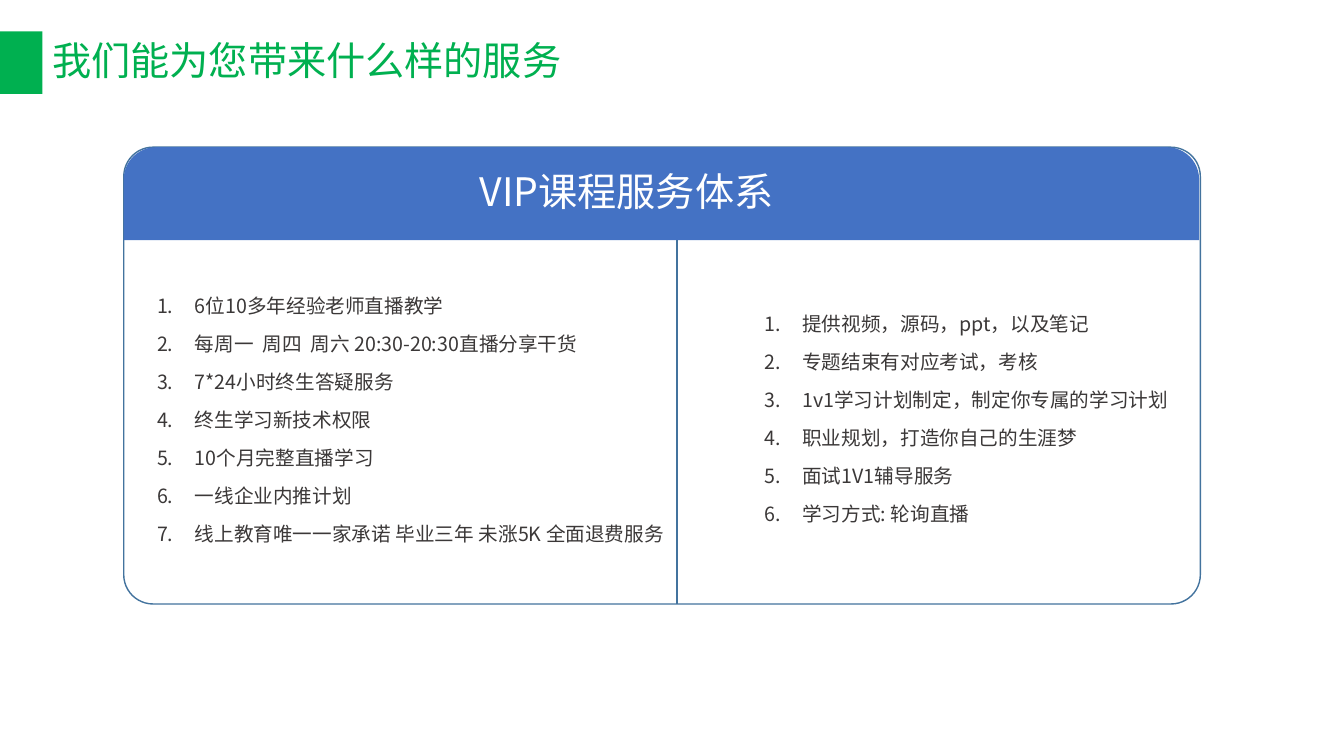
from lxml.etree import SubElement
from pptx import Presentation
from pptx.dml.color import RGBColor as RGB
from pptx.enum.shapes import MSO_CONNECTOR as CONN, MSO_SHAPE as SHAPE
from pptx.enum.text import MSO_ANCHOR as ANCHOR
from pptx.oxml.ns import qn
from pptx.util import Cm, Pt

COLORS = {"green": "00B050", "blue": "4472C4", "edge": "43739E",
          "white": "FFFFFF", "text": "3B3838"}
FONT = "Noto Sans CJK SC"
HEADING = {"name": FONT, "size": Pt(28)}
ITEM = {"name": FONT, "size": Pt(14)}

TEACHING = [
    "6位10多年经验老师直播教学",
    "每周一  周四  周六 20:30-20:30直播分享干货",
    "7*24小时终生答疑服务",
    "终生学习新技术权限",
    "10个月完整直播学习",
    "一线企业内推计划",
    "线上教育唯一一家承诺 毕业三年 未涨5K 全面退费服务",
]
SUPPORT = [
    "提供视频，源码，ppt，以及笔记",
    "专题结束有对应考试，考核",
    "1v1学习计划制定，制定你专属的学习计划",
    "职业规划，打造你自己的生涯梦",
    "面试1V1辅导服务",
    "学习方式: 轮询直播",
]


class Deck:
    def __init__(self, width, height):
        self.prs = Presentation()
        self.prs.slide_width, self.prs.slide_height = Cm(width), Cm(height)
        self.s = self.prs.slides.add_slide(self.prs.slide_layouts[6])

    def color(self, name):
        return RGB.from_string(COLORS[name])

    def shape(self, kind, box, fill=None, line=None, adj=()):
        sp = self.s.shapes.add_shape(kind, *map(Cm, box))
        sp.shadow.inherit = False
        for i, value in enumerate(adj):
            sp.adjustments[i] = value
        if fill:
            sp.fill.solid()
            sp.fill.fore_color.rgb = self.color(fill)
        else:
            sp.fill.background()
        if line:
            sp.line.color.rgb = self.color(line)
            sp.line.width = Pt(1)
        else:
            sp.line.fill.background()

    def line(self, x1, y1, x2, y2, color, width):
        cn = self.s.shapes.add_connector(CONN.STRAIGHT, *map(Cm, (x1, y1, x2, y2)))
        cn.line.color.rgb = self.color(color)
        cn.line.width = Pt(width)
        SubElement(cn._element.spPr, qn("a:effectLst"))

    def text(self, box, lines, style, color, numbered=False):
        tf = self.s.shapes.add_textbox(*map(Cm, box)).text_frame
        tf.word_wrap = True
        tf.vertical_anchor = ANCHOR.MIDDLE
        for i, line in enumerate(lines):
            p = tf.add_paragraph() if i else tf.paragraphs[0]
            p.line_spacing = 0.9
            if i:
                p.space_before = Pt(12)
            if numbered:
                self.number(p)
            r = p.add_run()
            r.text = line
            for key, value in style.items():
                setattr(r.font, key, value)
            r.font.color.rgb = self.color(color)
            SubElement(r.font._element, qn("a:ea"), typeface=style["name"])

    def number(self, p):
        pPr = p._p.get_or_add_pPr()
        indent = Cm(0.95)
        pPr.set("marL", str(indent))
        pPr.set("indent", str(-indent))
        SubElement(pPr, qn("a:buFont"), typeface="+mj-lt")
        SubElement(pPr, qn("a:buAutoNum"), type="arabicPeriod")


def main():
    deck = Deck(33.87, 19.05)
    deck.shape(SHAPE.RECTANGLE, (0, 0.79, 1.07, 1.58), fill="green")
    deck.text((1.07, 0.76, 31.75, 1.63), ["我们能为您带来什么样的服务"], HEADING, "green")

    left, top, width, height, header = 3.12, 3.71, 27.13, 11.51, 2.34
    deck.shape(SHAPE.ROUNDED_RECTANGLE, (left, top, width, height),
               line="edge", adj=[0.064])
    deck.shape(SHAPE.ROUND_2_SAME_RECTANGLE, (left, top, width - 0.03, header),
               fill="blue", adj=[0.345, 0])
    deck.text((11.84, 4.06, 15.88, 1.63), ["VIP课程服务体系"], HEADING, "white")

    for x, y, items in ((3.71, 6.4, TEACHING), (19.02, 6.38, SUPPORT)):
        deck.text((x, y, 15.88, 8.43), items, ITEM, "text", numbered=True)
    deck.line(17.06, top + header, 17.06, top + height, "edge", 1.75)

    deck.prs.save("out.pptx")


if __name__ == "__main__":
    main()
